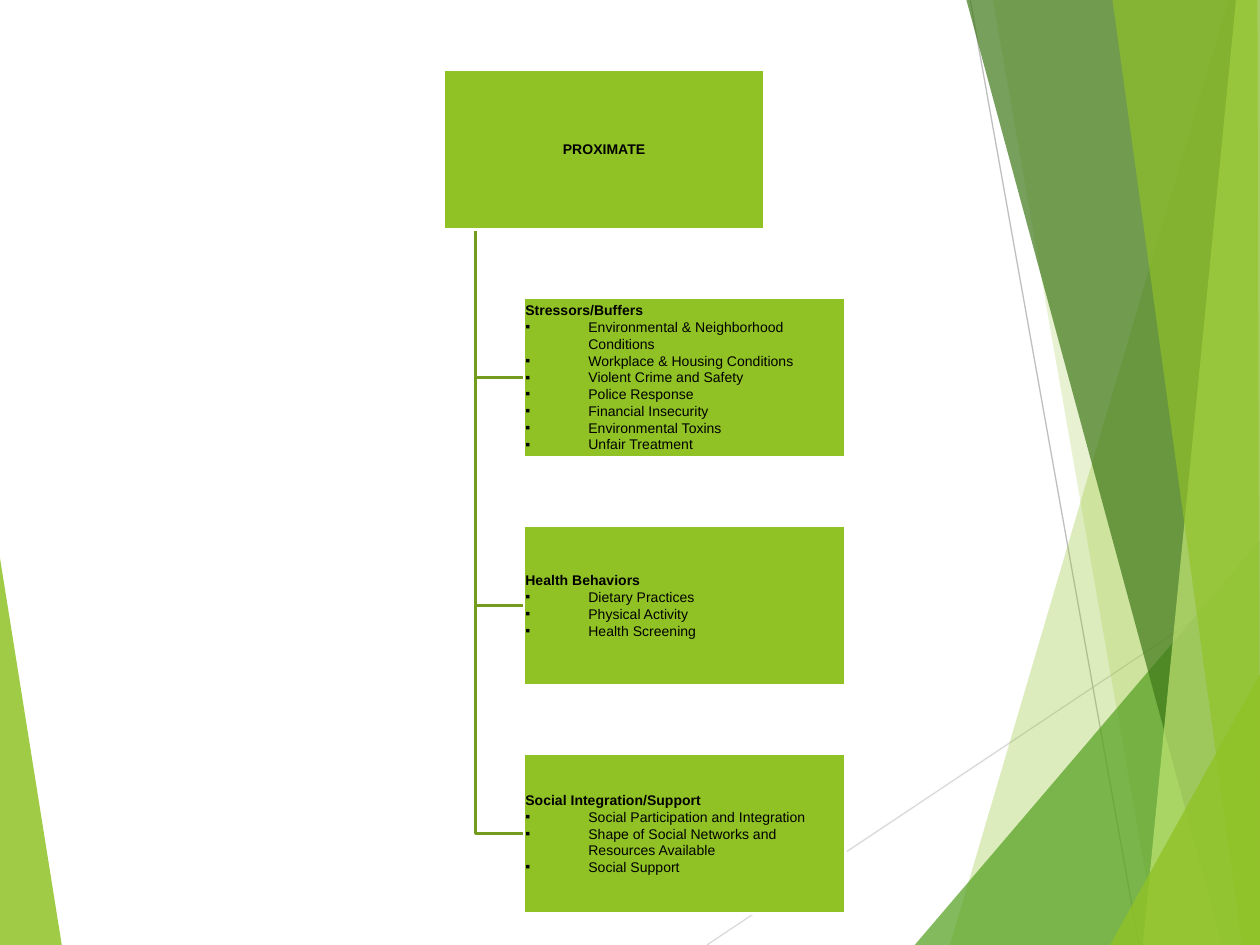
"""Build the slide on proximate factors: one heading with three linked lists."""
from lxml.etree import SubElement
from pptx import Presentation
from pptx.dml.color import RGBColor
from pptx.enum.shapes import MSO_CONNECTOR, MSO_SHAPE
from pptx.enum.text import MSO_ANCHOR, PP_ALIGN
from pptx.oxml.ns import qn
from pptx.util import Inches, Pt

HEADING = "PROXIMATE"
FACTORS = [
    ("Stressors/Buffers", [
        "Environmental & Neighborhood Conditions",
        "Workplace & Housing Conditions",
        "Violent Crime and Safety",
        "Police Response",
        "Financial Insecurity",
        "Environmental Toxins",
        "Unfair Treatment",
    ]),
    ("Health Behaviors", [
        "Dietary Practices",
        "Physical Activity",
        "Health Screening",
    ]),
    ("Social Integration/Support", [
        "Social Participation and Integration",
        "Shape of Social Networks and Resources Available",
        "Social Support",
    ]),
]

THEME = {
    "lime": "90C226", "green": "54A021", "forest": "3F7819", "pale": "C0E474",
    "branch": "739B1E", "edge": "FFFFFF", "text": "000000",
    "light_gray": "D9D9D9", "gray": "BFBFBF",
    "font": "Arial", "size": 8, "thin": 0.75, "thick": 1.5,
}

WIDTH, HEIGHT = 10, 7.5
LEFT_FACET = ("lime", 85, [(0, 4.43), (0.49, HEIGHT), (0, HEIGHT)])
RAYS = [
    ("light_gray", (5.61, HEIGHT), (WIDTH, 4.57)),
    ("gray", (7.7, 0), (9.04, HEIGHT)),
]
RIGHT_FACETS = [
    ("lime", 30, [(9.75, 0), (7.54, HEIGHT), (WIDTH, HEIGHT), (WIDTH, 0)]),
    ("lime", 20, [(7.88, 0), (9.19, HEIGHT), (WIDTH, HEIGHT), (WIDTH, 0)]),
    ("green", 72, [(7.26, HEIGHT), (WIDTH, 4.29), (WIDTH, HEIGHT)]),
    ("forest", 70, [(7.67, 0), (9.7, HEIGHT), (WIDTH, HEIGHT), (WIDTH, 0)]),
    ("pale", 70, [(9.81, 0), (9.07, HEIGHT), (WIDTH, HEIGHT), (WIDTH, 0)]),
    ("lime", 65, [(8.83, 0), (9.86, HEIGHT), (WIDTH, HEIGHT), (9.98, 0)]),
    ("lime", 80, [(8.81, HEIGHT), (WIDTH, 5.35), (WIDTH, HEIGHT)]),
]

BOX_WIDTH, BOX_HEIGHT, ROW_PITCH = 2.55, 1.27, 1.81
HEADING_LEFT, FACTOR_LEFT, TOP = 3.52, 4.16, 0.55
TRUNK = HEADING_LEFT + BOX_WIDTH / 10
HANG = 0.5


def color(name):
    return RGBColor.from_string(THEME[name])


def draw_path(page, points, closed):
    corners = [(Inches(x), Inches(y)) for x, y in points]
    builder = page.shapes.build_freeform(*corners[0])
    builder.add_line_segments(corners[1:], close=closed)
    outline = builder.convert_to_shape()
    outline.shadow.inherit = False
    return outline


def add_facet(page, name, opacity, points):
    facet = draw_path(page, points, True)
    facet.fill.solid()
    facet.fill.fore_color.rgb = color(name)
    facet.line.fill.background()
    fill_color = facet.element.spPr.find(qn("a:solidFill"))[0]
    SubElement(fill_color, qn("a:alpha"), val=str(opacity * 1000))


def add_ray(page, name, start, end):
    ray = page.shapes.add_connector(
        MSO_CONNECTOR.STRAIGHT, *(Inches(v) for v in start + end))
    ray.line.color.rgb = color(name)
    ray.line.width = Pt(THEME["thin"])
    SubElement(ray.element.spPr, qn("a:effectLst"))


def add_branch(page, row):
    middle = TOP + row * ROW_PITCH + BOX_HEIGHT / 2
    branch = draw_path(page, [(TRUNK, TOP + BOX_HEIGHT), (TRUNK, middle),
                              (FACTOR_LEFT, middle)], False)
    branch.fill.background()
    branch.line.color.rgb = color("branch")
    branch.line.width = Pt(THEME["thick"])


def add_box(page, left, row):
    box = page.shapes.add_shape(
        MSO_SHAPE.RECTANGLE, Inches(left), Inches(TOP + row * ROW_PITCH),
        Inches(BOX_WIDTH), Inches(BOX_HEIGHT))
    box.shadow.inherit = False
    box.fill.solid()
    box.fill.fore_color.rgb = color("lime")
    box.line.color.rgb = color("edge")
    box.line.width = Pt(THEME["thick"])
    frame = box.text_frame
    frame.word_wrap = True
    frame.vertical_anchor = MSO_ANCHOR.MIDDLE
    frame.margin_left = frame.margin_right = Inches(0.01)
    frame.margin_top = frame.margin_bottom = Inches(0.01)
    return frame


def write(para, text, bold=False, align=PP_ALIGN.LEFT, hang=0, bullet=None):
    para.alignment = align
    span = para.add_run()
    span.text = text
    span.font.name = THEME["font"]
    span.font.size = Pt(THEME["size"])
    span.font.bold = bold
    span.font.color.rgb = color("text")
    properties = para._p.get_or_add_pPr()
    properties.set("marL", str(Inches(hang)))
    properties.set("indent", str(-Inches(hang)))
    if bullet:
        SubElement(properties, qn("a:buFont"), typeface=THEME["font"])
        SubElement(properties, qn("a:buChar"), char=bullet)


def main():
    deck = Presentation()
    deck.slide_width, deck.slide_height = Inches(WIDTH), Inches(HEIGHT)
    page = deck.slides.add_slide(deck.slide_layouts[6])

    add_facet(page, *LEFT_FACET)
    for ray in RAYS:
        add_ray(page, *ray)
    for facet in RIGHT_FACETS:
        add_facet(page, *facet)

    for row in range(len(FACTORS), 0, -1):
        add_branch(page, row)
    frame = add_box(page, HEADING_LEFT, 0)
    write(frame.paragraphs[0], HEADING, bold=True, align=PP_ALIGN.CENTER)
    for row, (title, items) in enumerate(FACTORS, 1):
        frame = add_box(page, FACTOR_LEFT, row)
        write(frame.paragraphs[0], title, bold=True, hang=HANG)
        for item in items:
            write(frame.add_paragraph(), item, hang=HANG, bullet="▪")

    deck.save("out.pptx")


if __name__ == "__main__":
    main()
